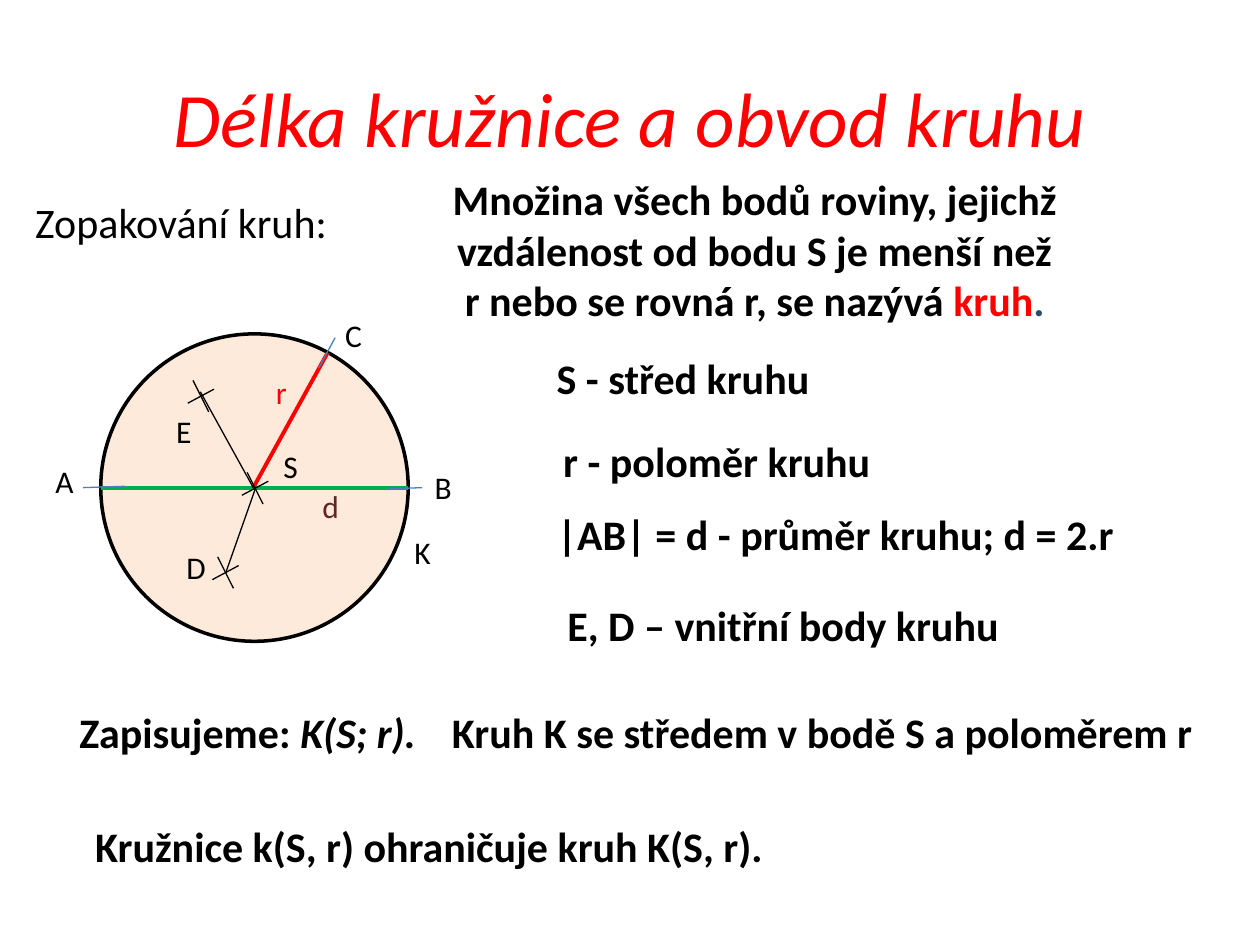
from lxml.etree import SubElement
from pptx import Presentation
from pptx.dml.color import RGBColor
from pptx.enum.shapes import MSO_CONNECTOR, MSO_SHAPE
from pptx.enum.text import MSO_ANCHOR, MSO_AUTO_SIZE, PP_ALIGN
from pptx.oxml.ns import qn
from pptx.util import Pt

BLACK = RGBColor(0x00, 0x00, 0x00)
RED = RGBColor(0xFF, 0x00, 0x00)
GREEN = RGBColor(0x00, 0xB0, 0x50)
BLUE = RGBColor(0x4B, 0x7E, 0xBC)
NAVY = RGBColor(0x28, 0x4C, 0x6A)
MAROON = RGBColor(0x63, 0x25, 0x23)
PEACH = RGBColor(0xFD, 0xEA, 0xDA)


def add_text(slide, text, box, size=24, color=BLACK, bold=False, italic=False,
             align=PP_ALIGN.LEFT, wrap=True, grow=True, anchor=MSO_ANCHOR.TOP):
    """Add text, given as a string or as (words, run format) pairs, in a box in points."""
    frame = slide.shapes.add_textbox(*map(Pt, box)).text_frame
    frame.word_wrap = wrap
    frame.auto_size = MSO_AUTO_SIZE.SHAPE_TO_FIT_TEXT if grow else MSO_AUTO_SIZE.NONE
    frame.vertical_anchor = anchor
    paragraph = frame.paragraphs[0]
    paragraph.alignment = align
    for words, style in [(text, {})] if isinstance(text, str) else text:
        run = paragraph.add_run()
        run.text = words
        run.font.name = "Calibri"
        run.font.size = Pt(size)
        run.font.bold = bold
        run.font.italic = style.get("italic", italic)
        run.font.color.rgb = style.get("color", color)


def add_segment(slide, start, end, color=BLACK, width=0.75):
    """Draw a straight segment between two points."""
    segment = slide.shapes.add_connector(MSO_CONNECTOR.STRAIGHT, *map(Pt, (*start, *end)))
    segment.line.color.rgb = color
    segment.line.width = Pt(width)
    SubElement(segment._element.spPr, qn("a:effectLst"))


def add_cross(slide, x, y):
    """Mark a point with two crossing strokes."""
    for dx, dy in ((4.5, 9), (7.5, -4)):
        add_segment(slide, (x - dx, y - dy), (x + dx, y + dy))


def add_title(slide, box):
    """Place the slide title."""
    add_text(slide, "Délka kružnice a obvod kruhu", box, size=44, color=RED, italic=True,
             align=PP_ALIGN.CENTER, grow=False, anchor=MSO_ANCHOR.MIDDLE)


def add_circle_diagram(slide, left, top, diameter):
    """Draw the disc with its diameter, radius, marked points and labels."""
    disc = slide.shapes.add_shape(MSO_SHAPE.OVAL, *map(Pt, (left, top, diameter, diameter)))
    disc.shadow.inherit = False
    disc.fill.solid()
    disc.fill.fore_color.rgb = PEACH
    disc.line.color.rgb = BLACK
    disc.line.width = Pt(2)

    middle = diameter / 2
    center = (middle - 0.7, middle)
    segments = [
        ((0, middle), (diameter, middle), GREEN, 2.25),
        ((129.6, 10.8), center, RED, 2.25),
        ((56.9, 33.1), center, BLACK, 0.75),
        ((71.3, 136.8), (middle + 0.7, middle), BLACK, 0.75),
        ((124.6, 19.4), (133.9, 2.2), BLUE, 0.75),
        ((-10.1, middle), (13.7, 87.1), BLUE, 0.75),
        ((164.2, 88.6), (183.6, middle), BLUE, 0.75),
    ]
    for (x1, y1), (x2, y2), color, width in segments:
        add_segment(slide, (left + x1, top + y1), (left + x2, top + y2), color, width)

    for x, y in ((88.2, 88.2), (71.3, 136.4), (57.2, 35.6)):
        add_cross(slide, left + x, top + y)

    labels = [
        ("K", 172.1, 110.2, BLACK), ("S", 97.2, 61.2, BLACK), ("r", 92.9, 18.7, RED),
        ("d", 119.5, 84.2, MAROON), ("B", 183.6, 73.4, BLACK), ("A", -33.1, 69.8, BLACK),
        ("E", 36, 41, BLACK), ("D", 41.8, 118.8, BLACK), ("C", 132.5, -13.7, BLACK),
    ]
    for label, x, y, color in labels:
        add_text(slide, label, (left + x, top + y, 22.3, 28.8), size=18, color=color)


def add_definitions(slide, left, top, width):
    """Place the definition of the disc and the meaning of its symbols."""
    definition = [
        ("Množina všech bodů roviny, jejichž vzdálenost od bodu S je menší než "
         "r nebo se rovná r, se nazývá ", {}),
        ("kruh", {"color": RED}),
        (".", {"color": NAVY}),
    ]
    add_text(slide, definition, (left, top, width, 94.3), bold=True, align=PP_ALIGN.CENTER)
    add_text(slide, "S - střed kruhu", (left + 59.7, top + 102.2, 160.6, 36),
             bold=True, wrap=False)
    symbols = [
        ("r - poloměr kruhu", 38.1, 149.7, 240.5),
        ("|AB| = d - průměr kruhu; d = 2.r", 46.1, 191.5, width),
        ("E, D – vnitřní body kruhu", 57.6, 243.3, 277.2),
    ]
    for meaning, x, y, span in symbols:
        add_text(slide, meaning, (left + x, top + y, span, 36), bold=True,
                 align=PP_ALIGN.CENTER)


def add_notation(slide, left, top):
    """Place the notation of the disc and its boundary."""
    add_text(slide, [("Zapisujeme: ", {}), ("K(S; r).", {"italic": True})],
             (left, top, 207.4, 36), bold=True, wrap=False)
    statements = [
        ("Kruh K se středem v bodě S a poloměrem r", 210.9, 0, 441.4),
        ("Kružnice k(S, r) ohraničuje kruh K(S, r).", 7.2, 64.8, 399.6),
    ]
    for statement, x, y, span in statements:
        add_text(slide, statement, (left + x, top + y, span, 36), bold=True,
                 align=PP_ALIGN.CENTER, wrap=False)


def main():
    """Build and save the slide."""
    presentation = Presentation()
    presentation.slide_width, presentation.slide_height = Pt(720), Pt(540)
    slide = presentation.slides.add_slide(presentation.slide_layouts[6])
    add_circle_diagram(slide, 57.6, 190.8, 175.7)
    add_title(slide, (36, 21.6, 648, 90))
    add_text(slide, "Zopakování kruh:", (13, 108.7, 182.9, 36), wrap=False)
    add_definitions(slide, 251.3, 95.8, 360)
    add_notation(slide, 38.2, 400.3)
    presentation.save("out.pptx")


if __name__ == "__main__":
    main()
